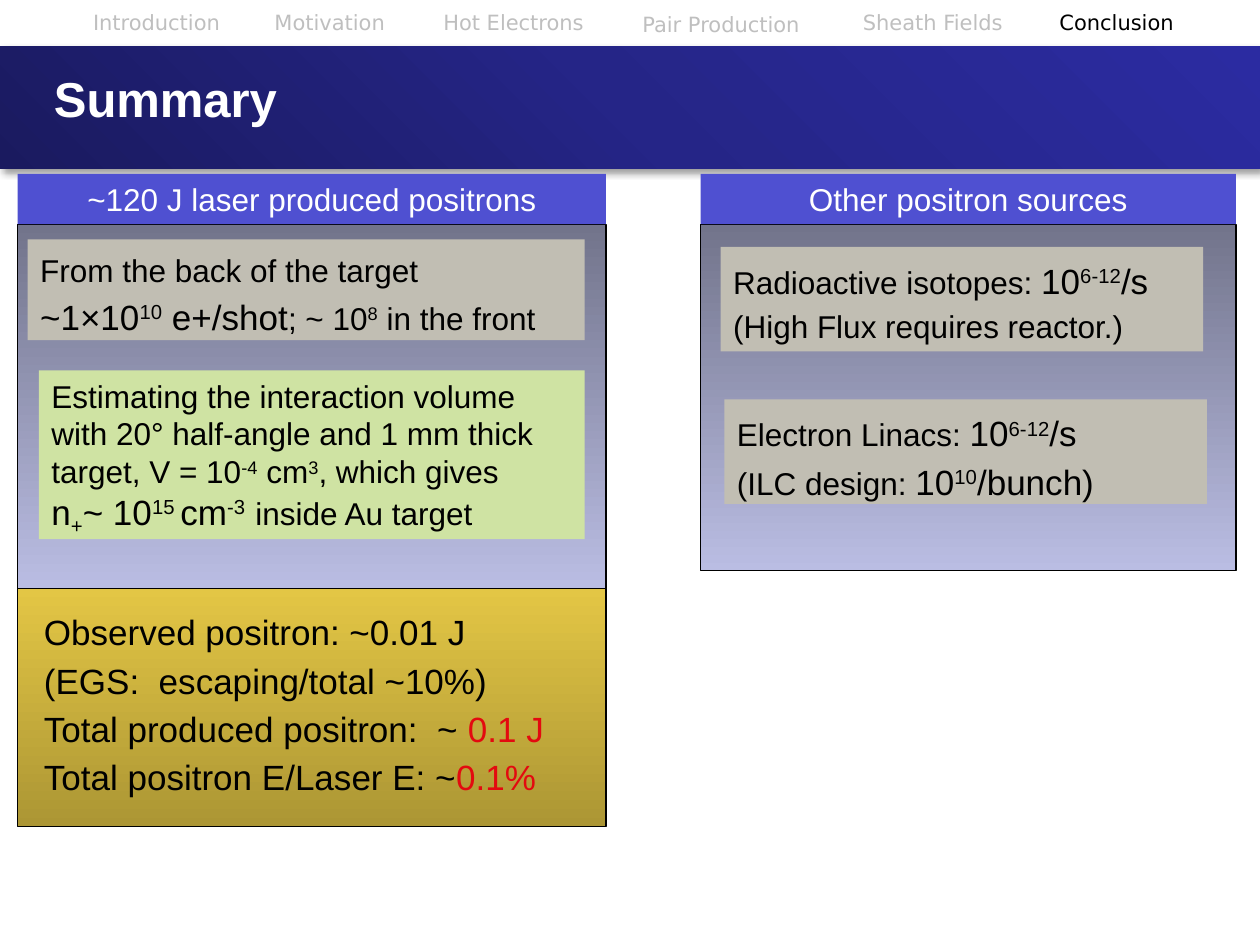
from lxml import etree
from pptx import Presentation
from pptx.dml.color import RGBColor
from pptx.enum.shapes import MSO_SHAPE
from pptx.enum.text import MSO_ANCHOR, MSO_AUTO_SIZE, PP_ALIGN
from pptx.oxml.ns import qn
from pptx.util import Inches, Pt

BLACK, WHITE, GREY, RED = "000000", "FFFFFF", "BFBFBF", "E30A0F"
HEADER_BLUE, STONE, GREEN = "4F50D1", "C1BEB3", "CFE3A3"
BANNER_STOPS = [(0, "1A1A5F"), (50, "252587"), (100, "2B2BA1")]
PANEL_STOPS = [(0, "72748B"), (100, "BABDE3")]
GOLD_STOPS = [(0, "E3C645"), (100, "AC9634")]
SUPER, SUB = 30, -25


def color(hex_value):
    return RGBColor.from_string(hex_value)


def add_element(parent, tag, **attributes):
    element = etree.SubElement(parent, qn(tag))
    for name, value in attributes.items():
        element.set(name, str(value))
    return element


def add_rectangle(slide, box, fill=None):
    shape = slide.shapes.add_shape(MSO_SHAPE.RECTANGLE, *map(Inches, box))
    shape.shadow.inherit = False
    shape.line.fill.background()
    if fill:
        shape.fill.solid()
        shape.fill.fore_color.rgb = color(fill)
    return shape


def add_gradient_rectangle(slide, box, stops, angle):
    """Angle runs counter-clockwise, in degrees."""
    shape = add_rectangle(slide, box)
    shape.fill.gradient()
    shape.fill.gradient_angle = angle
    stop_list = shape._element.spPr.find(".//" + qn("a:gsLst"))
    for old_stop in list(stop_list):
        stop_list.remove(old_stop)
    for position, hex_value in stops:
        stop = add_element(stop_list, "a:gs", pos=position * 1000)
        add_element(stop, "a:srgbClr", val=hex_value)
    return shape


def add_run(paragraph, text, size=18, baseline=0, hex_color=BLACK, font="Arial"):
    run = paragraph.add_run()
    run.text = text
    run.font.size = Pt(size)
    run.font.name = font
    run.font.color.rgb = color(hex_color)
    if baseline:
        run._r.get_or_add_rPr().set("baseline", str(baseline * 1000))
    return run


def write_lines(shape, lines, spacing=None, hanging=False, align=PP_ALIGN.LEFT):
    """Each line is a list of runs: text, size, baseline, colour."""
    frame = shape.text_frame
    frame.word_wrap = True
    frame.auto_size = MSO_AUTO_SIZE.SHAPE_TO_FIT_TEXT
    frame.vertical_anchor = MSO_ANCHOR.TOP
    for index, runs in enumerate(lines):
        paragraph = frame.add_paragraph() if index else frame.paragraphs[0]
        paragraph.alignment = align
        if spacing:
            paragraph.line_spacing = spacing
        if hanging:
            properties = paragraph._p.get_or_add_pPr()
            properties.set("marL", str(Inches(0.5)))
            properties.set("indent", str(Inches(-0.5)))
        for run in runs:
            add_run(paragraph, *run)


def add_banner(slide, box):
    left, top, width, height = box
    banner = add_gradient_rectangle(slide, box, BANNER_STOPS, 45)
    shadow = add_element(banner._element.spPr.find(qn("a:effectLst")), "a:outerShdw",
                         blurRad=Pt(4), dist=Pt(3), dir=45 * 60000, algn="tl", rotWithShape=0)
    add_element(add_element(shadow, "a:srgbClr", val=BLACK), "a:alpha", val=40000)

    title = slide.shapes.add_textbox(Inches(left + 0.33), Inches(top - 0.01),
                                     Inches(width - 0.53), Inches(height - 0.08))
    title.text_frame.word_wrap = True
    title.text_frame.vertical_anchor = MSO_ANCHOR.MIDDLE
    paragraph = title.text_frame.paragraphs[0]
    paragraph.line_spacing = 0.9
    add_run(paragraph, "Summary", 28, hex_color=WHITE).font.bold = True


def add_navigation(slide, entries, current):
    for label, *box in entries:
        text_box = slide.shapes.add_textbox(*map(Inches, box))
        text_box.text_frame.word_wrap = False
        text_box.text_frame.auto_size = MSO_AUTO_SIZE.SHAPE_TO_FIT_TEXT
        add_run(text_box.text_frame.paragraphs[0], label, 12,
                hex_color=BLACK if label == current else GREY, font="DejaVu Sans")


def add_outlined_panel(slide, box, stops):
    panel = add_gradient_rectangle(slide, box, stops, 270)
    panel.line.color.rgb = color(BLACK)
    panel.line.width = Pt(0.75)


def add_column(slide, box, heading):
    left, top, width, height = box
    header_height = 0.4
    add_outlined_panel(slide, (left, top + header_height, width, height - header_height),
                       PANEL_STOPS)
    header = add_rectangle(slide, (left, top, width, header_height), HEADER_BLUE)
    write_lines(header, [[(heading, 18, 0, WHITE)]], align=PP_ALIGN.CENTER)


def add_stone_note(slide, box, lines):
    write_lines(add_rectangle(slide, box, STONE), lines, spacing=1.15, hanging=True)


def add_laser_column(slide, box):
    left, top, width, height = box
    add_column(slide, box, "~120 J laser produced positrons")
    add_stone_note(slide, (left + 0.08, top + 0.52, 4.42, 0.8), [
        [("From the back of the target",)],
        [("~1×10", 20), ("10", 20, SUPER), (" e+/shot", 20),
         ("; ~ 10",), ("8", 18, SUPER), (" in the front",)],
    ])
    estimate = add_rectangle(slide, (left + 0.17, top + 1.56, 4.33, 1.34), GREEN)
    write_lines(estimate, [
        [("Estimating the interaction volume with 20° half-angle and 1 mm thick "
          "target, V = 10",), ("-4", 18, SUPER), (" cm",), ("3", 18, SUPER),
         (", which gives",)],
        [("n", 20), ("+", 20, SUB), ("~ 10", 20), ("15 ", 20, SUPER), ("cm", 20),
         ("-3", 20, SUPER), ("  ", 18, SUPER), ("inside Au target",)],
    ])


def add_energy_panel(slide, box):
    left, top, width, height = box
    add_outlined_panel(slide, box, GOLD_STOPS)
    text_box = slide.shapes.add_textbox(Inches(left + 0.11), Inches(top + 0.08),
                                        Inches(width - 0.09), Inches(1.57))
    write_lines(text_box, [
        [("Observed positron: ~0.01 J", 20)],
        [("(EGS:  escaping/total ~10%)", 20)],
        [("Total produced positron:  ~ ", 20), ("0.1 J", 20, 0, RED)],
        [("Total positron E/Laser E: ~", 20), ("0.1%", 20, 0, RED)],
    ], spacing=1.15)


def add_sources_column(slide, box):
    left, top, width, height = box
    add_column(slide, box, "Other positron sources")
    rate = [("10", 20), ("6-12", 20, SUPER), ("/s", 20)]
    add_stone_note(slide, (left + 0.16, top + 0.58, 3.83, 0.83), [
        [("Radioactive isotopes: ",), *rate],
        [("(High Flux requires reactor.)",)],
    ])
    add_stone_note(slide, (left + 0.19, top + 1.79, 3.83, 0.83), [
        [("Electron Linacs: ",), *rate],
        [("(ILC design: ",), ("10", 20), ("10", 20, SUPER), ("/bunch)", 20)],
    ])


def main():
    presentation = Presentation()
    presentation.slide_width, presentation.slide_height = Inches(10), Inches(7.5)
    slide = presentation.slides.add_slide(presentation.slide_layouts[6])
    add_banner(slide, (0, 0.37, 10, 0.97))
    add_sources_column(slide, (5.56, 1.38, 4.25, 3.15))
    add_laser_column(slide, (0.14, 1.38, 4.67, 3.29))
    add_energy_panel(slide, (0.14, 4.67, 4.67, 1.89))
    add_navigation(slide, [
        ("Introduction", 0.64, 0.03, 1.24, 0.3),
        ("Motivation", 2.08, 0.03, 1.08, 0.3),
        ("Hot Electrons", 3.42, 0.03, 1.33, 0.3),
        ("Pair Production", 5, 0.04, 1.47, 0.3),
        ("Sheath Fields", 6.75, 0.03, 1.34, 0.3),
        ("Conclusion", 8.31, 0.03, 1.11, 0.3),
    ], current="Conclusion")
    presentation.save("out.pptx")


if __name__ == "__main__":
    main()
